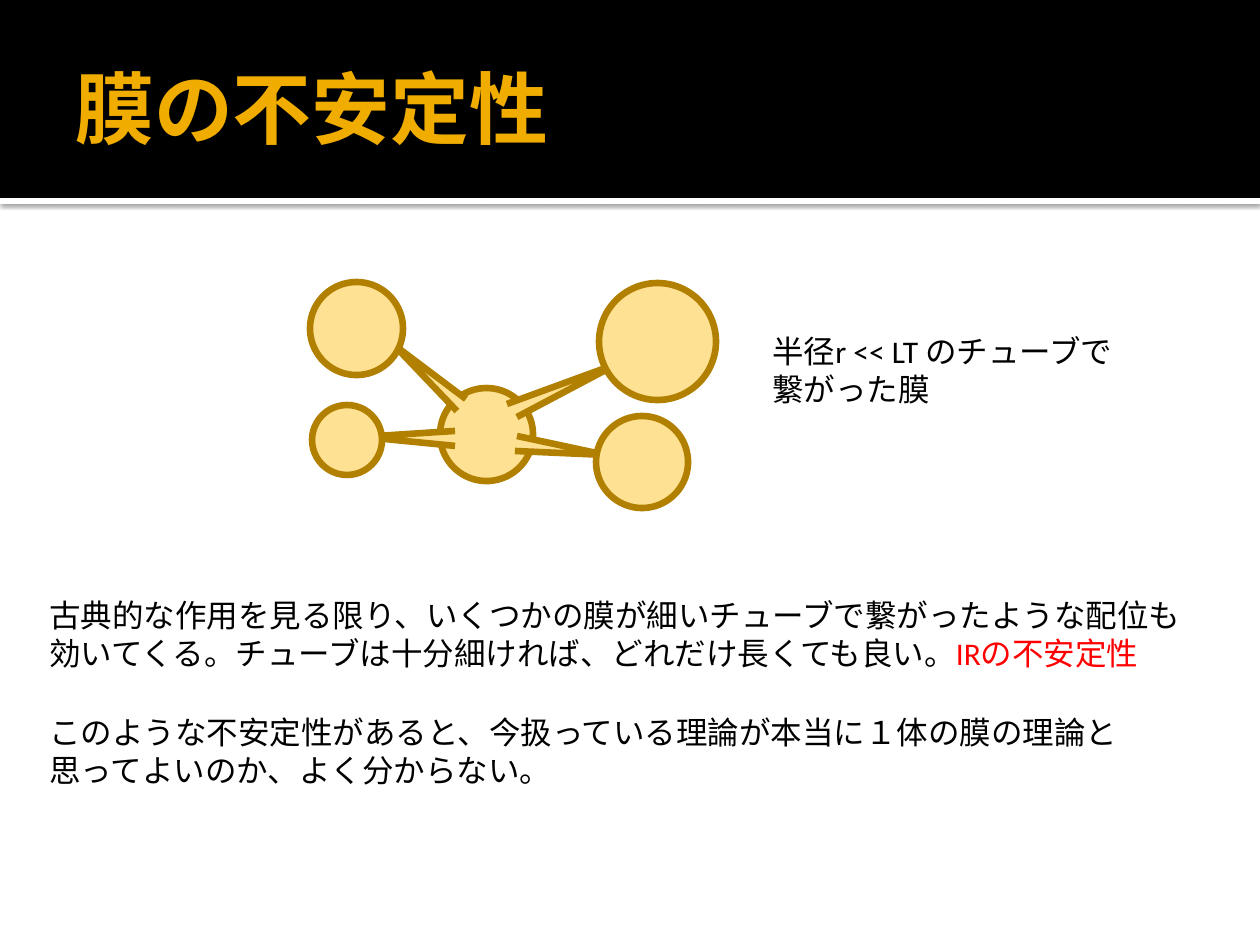
from dataclasses import dataclass

import pptx
import pptx.dml.color
import pptx.enum.shapes
import pptx.enum.text
import pptx.oxml
import pptx.oxml.ns
import pptx.util

SCALE = 914400 / 126  # EMU in one px
KIND = pptx.enum.shapes.MSO_SHAPE
ANCHOR = pptx.enum.text.MSO_ANCHOR
FIT = pptx.enum.text.MSO_AUTO_SIZE


@dataclass(frozen=True)
class Theme:
    font: str = "Calibri"
    title: int = 45
    body: int = 18
    edge: float = 3.78
    black: str = "000000"
    white: str = "FFFFFF"
    gold: str = "F0AD00"
    red: str = "FF0000"
    skin: str = "FFE193"
    rim: str = "B28000"


@dataclass(frozen=True)
class Box:
    left: int
    top: int
    width: int
    height: int


@dataclass(frozen=True)
class Run:
    text: str
    color: str
    size: int
    bold: bool = False


@dataclass(frozen=True)
class Note:
    box: Box
    lines: list[list[Run]]


@dataclass(frozen=True)
class Ball:
    left: int
    top: int
    size: int


@dataclass(frozen=True)
class Tube:
    """Two wide ends joined through a sharp tip."""
    start: tuple[int, int]
    tip: tuple[int, int]
    end: tuple[int, int]


THEME = Theme()


def px(value: int) -> int:
    return round(value * SCALE)


def area(box: Box) -> tuple[int, ...]:
    return px(box.left), px(box.top), px(box.width), px(box.height)


def rgb(code: str) -> pptx.dml.color.RGBColor:
    return pptx.dml.color.RGBColor.from_string(code)


def paint(shape, fill: str, line: str | None = None) -> None:
    shape.shadow.inherit = False
    shape.fill.solid()
    shape.fill.fore_color.rgb = rgb(fill)
    if line:
        shape.line.color.rgb = rgb(line)
        shape.line.width = pptx.util.Pt(THEME.edge)
    else:
        shape.line.fill.background()


def band(slide, box: Box, fill: str):
    shape = slide.shapes.add_shape(KIND.RECTANGLE, *area(box))
    paint(shape, fill)
    return shape


def shade(shape) -> None:
    """Give the shape a soft shadow straight below it."""
    space = pptx.oxml.ns.nsdecls("a")
    glow = pptx.oxml.parse_xml(
        f'<a:outerShdw {space} blurRad="31750" dist="10160" dir="5400000" '
        f'algn="tl" rotWithShape="0"><a:srgbClr val="{THEME.black}">'
        '<a:alpha val="60000"/></a:srgbClr></a:outerShdw>')
    shape.element.spPr.find(pptx.oxml.ns.qn("a:effectLst")).append(glow)


def write(slide, note: Note, **frame) -> None:
    body = slide.shapes.add_textbox(*area(note.box)).text_frame
    for name, value in ({"word_wrap": True} | frame).items():
        setattr(body, name, value)
    for i, line in enumerate(note.lines):
        para = body.paragraphs[0] if i == 0 else body.add_paragraph()
        for part in line:
            run = para.add_run()
            run.text = part.text
            look = {"name": THEME.font, "size": pptx.util.Pt(part.size),
                    "bold": part.bold}
            for name, value in look.items():
                setattr(run.font, name, value)
            run.font.color.rgb = rgb(part.color)


def ball(group, item: Ball) -> None:
    box = Box(item.left, item.top, item.size, item.size)
    shape = group.shapes.add_shape(KIND.OVAL, *area(box))
    paint(shape, THEME.skin, THEME.rim)


def tube(group, item: Tube) -> None:
    pen = group.shapes.build_freeform(*item.start, scale=SCALE)
    pen.add_line_segments([item.tip, item.end], close=False)
    paint(pen.convert_to_shape(), THEME.skin, THEME.rim)


def plain(text: str) -> Run:
    return Run(text, THEME.black, THEME.body)


HEAD = Note(Box(63, 21, 1134, 173),
            [[Run("膜の不安定性", THEME.gold, THEME.title, True)]])

NOTES = [
    Note(Box(760, 326, 373, 89), [
        [plain("半径r << LT のチューブで")],
        [plain("繋がった膜")],
    ]),
    Note(Box(37, 590, 1171, 127), [
        [plain("古典的な作用を見る限り、いくつかの膜が細いチューブで繋がったような配位も")],
        [plain("効いてくる。チューブは十分細ければ、どれだけ長くても良い。"),
         Run("IRの不安定性", THEME.red, THEME.body)],
    ]),
    Note(Box(37, 707, 1106, 89), [
        [plain("このような不安定性があると、今扱っている理論が本当に１体の膜の理論と")],
        [plain("思ってよいのか、よく分からない。")],
    ]),
]

CORE = Ball(440, 388, 93)
TUBES = [
    Tube((507, 404), (619, 363), (517, 417)),
    Tube((517, 436), (606, 455), (515, 451)),
    Tube((455, 446), (363, 437), (455, 431)),
    Tube((457, 411), (393, 344), (466, 399)),
]
BALLS = [
    Ball(599, 283, 117),
    Ball(596, 416, 92),
    Ball(310, 282, 93),
    Ball(312, 405, 70),
]


def main() -> None:
    deck = pptx.Presentation()
    deck.slide_width, deck.slide_height = px(1260), px(945)
    slide = deck.slides.add_slide(deck.slide_layouts[6])

    shade(band(slide, Box(0, 198, 1260, 6), THEME.white))
    band(slide, Box(0, 0, 1260, 198), THEME.black)
    write(slide, HEAD, vertical_anchor=ANCHOR.MIDDLE,
          margin_right=pptx.util.Inches(0.05))
    for note in NOTES:
        write(slide, note, auto_size=FIT.SHAPE_TO_FIT_TEXT)

    group = slide.shapes.add_group_shape()
    ball(group, CORE)
    for item in TUBES:
        tube(group, item)
    for item in BALLS:
        ball(group, item)

    deck.save("out.pptx")


if __name__ == "__main__":
    main()
